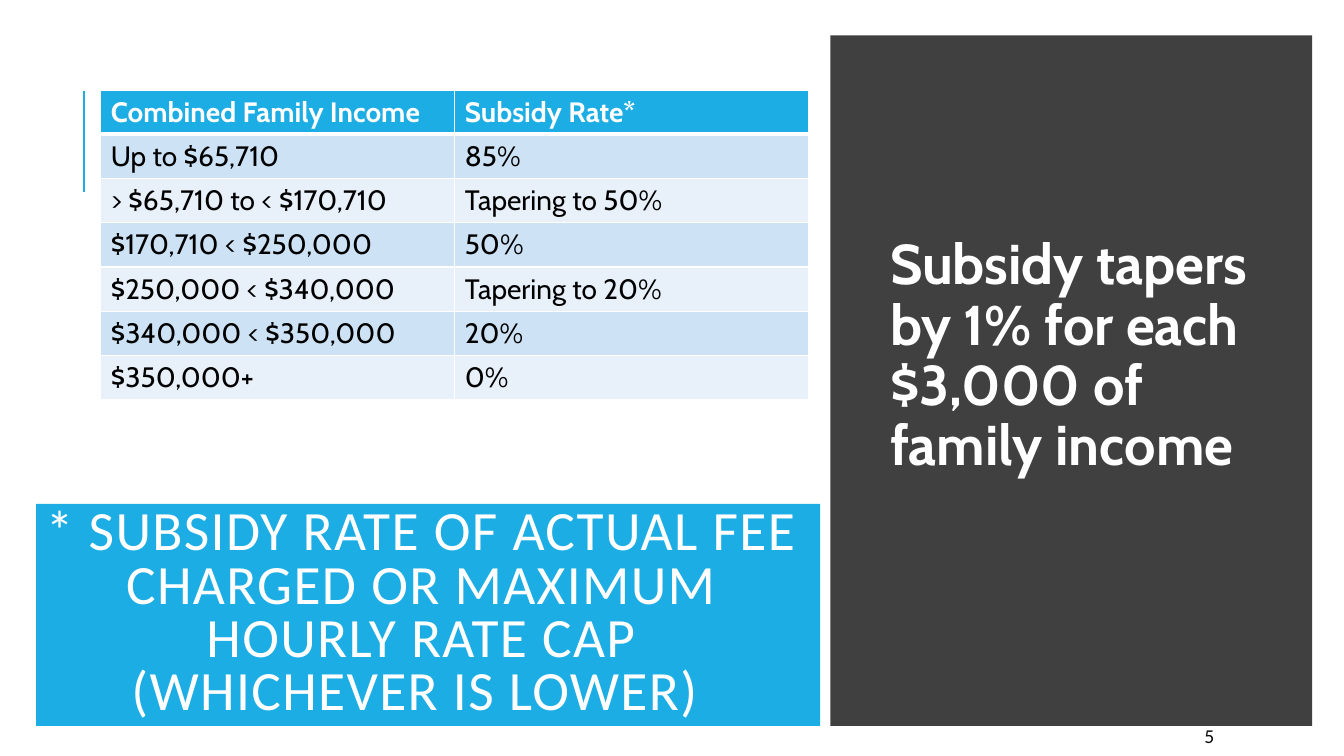
from dataclasses import dataclass

from lxml.etree import SubElement
from pptx import Presentation
from pptx.dml.color import RGBColor
from pptx.enum.shapes import MSO_CONNECTOR as Connector, MSO_SHAPE as Preset
from pptx.enum.text import MSO_ANCHOR as Anchor, MSO_AUTO_SIZE as AutoSize, PP_ALIGN as Align
from pptx.oxml.ns import qn
from pptx.slide import Slide
from pptx.table import _Cell as Cell
from pptx.text.text import TextFrame
from pptx.util import Cm, Pt

BLUE = RGBColor(0x1C, 0xAD, 0xE4)
CHARCOAL = RGBColor(0x40, 0x40, 0x40)
WHITE = RGBColor(0xFF, 0xFF, 0xFF)
BLACK = RGBColor(0x00, 0x00, 0x00)
NEAR_BLACK = RGBColor(0x0D, 0x0D, 0x0D)
BAND_DARK = RGBColor(0xCD, 0xE3, 0xF5)
BAND_LIGHT = RGBColor(0xE8, 0xF1, 0xFA)
ROW_HEIGHT = 1.11
COLUMN_WIDTH = 8.92


@dataclass(frozen=True)
class Area:
    left: float
    top: float
    width: float
    height: float

    def lengths(self) -> tuple[Cm, Cm, Cm, Cm]:
        return Cm(self.left), Cm(self.top), Cm(self.width), Cm(self.height)


@dataclass(frozen=True)
class Panel:
    area: Area
    color: RGBColor


@dataclass(frozen=True)
class TextStyle:
    font: str
    size: float
    color: RGBColor
    bold: bool = False
    align: Align = Align.LEFT
    line_spacing: float = 1.0


@dataclass(frozen=True)
class SubsidyBand:
    income: str
    rate: str


PANELS = [
    Panel(Area(0.91, 12.7, 19.76, 5.59), BLUE),
    Panel(Area(20.93, 0.89, 12.14, 17.4), CHARCOAL),
]
BANDS = [
    SubsidyBand("Combined Family Income", "Subsidy Rate*"),
    SubsidyBand("Up to $65,710", "85%"),
    SubsidyBand("> $65,710 to < $170,710", "Tapering to 50%"),
    SubsidyBand("$170,710 < $250,000", "50%"),
    SubsidyBand("$250,000 < $340,000", "Tapering to 20%"),
    SubsidyBand("$340,000 < $350,000", "20%"),
    SubsidyBand("$350,000+", "0%"),
]
HEADER_STYLE = TextStyle("Cabin", 20, WHITE, bold=True)
BODY_STYLE = TextStyle("Cabin", 20, BLACK)
TITLE_STYLE = TextStyle("Calibri", 39.6, WHITE, align=Align.CENTER, line_spacing=0.8)
TAPER_STYLE = TextStyle("Cabin", 40, WHITE, bold=True, line_spacing=0.9)
NUMBER_STYLE = TextStyle("Calibri", 14, NEAR_BLACK)


def write_text(frame: TextFrame, text: str, style: TextStyle) -> None:
    para = frame.paragraphs[0]
    para.add_run().text = text
    para.alignment = style.align
    para.line_spacing = style.line_spacing
    para.font.name = style.font
    para.font.size = Pt(style.size)
    para.font.bold = style.bold
    para.font.color.rgb = style.color


def prepare_frame(frame: TextFrame) -> None:
    frame.word_wrap = True
    frame.auto_size = AutoSize.NONE
    frame.vertical_anchor = Anchor.MIDDLE


def add_panel(page: Slide, panel: Panel) -> None:
    shape = page.shapes.add_shape(Preset.RECTANGLE, *panel.area.lengths())
    shape.shadow.inherit = False
    shape.fill.solid()
    shape.fill.fore_color.rgb = panel.color
    shape.line.fill.background()


def add_accent_line(page: Slide) -> None:
    line = page.shapes.add_connector(
        Connector.STRAIGHT, Cm(2.12), Cm(4.83), Cm(2.12), Cm(2.29)
    )
    line.line.color.rgb = BLUE
    line.line.width = Pt(1.5)
    SubElement(line._element.spPr, qn("a:effectLst"))


def place_title(page: Slide, text: str) -> None:
    title = page.shapes.title
    title.left, title.top, title.width, title.height = Area(0.89, 13.23, 19.48, 4.52).lengths()
    page.shapes._spTree.append(title._element)
    prepare_frame(title.text_frame)
    write_text(title.text_frame, text, TITLE_STYLE)
    for span in title.text_frame.paragraphs[0].runs:
        span._r.get_or_add_rPr().set("spc", "100")


def add_label(page: Slide, area: Area, text: str, style: TextStyle, inset: float) -> None:
    box = page.shapes.add_textbox(*area.lengths())
    frame = box.text_frame
    prepare_frame(frame)
    frame.margin_left = frame.margin_right = Cm(inset)
    write_text(frame, text, style)


def add_borders(cell: Cell, top: float, bottom: float) -> None:
    properties = cell._tc.get_or_add_tcPr()
    for side, points in (("lnL", 1), ("lnR", 1), ("lnT", top), ("lnB", bottom)):
        border = SubElement(properties, qn(f"a:{side}"), w=str(Pt(points)))
        fill = SubElement(border, qn("a:solidFill"))
        SubElement(fill, qn("a:srgbClr"), val=str(WHITE))


def add_subsidy_table(page: Slide, bands: list[SubsidyBand]) -> None:
    area = Area(2.54, 2.27, 2 * COLUMN_WIDTH, len(bands) * ROW_HEIGHT)
    table = page.shapes.add_table(len(bands), 2, *area.lengths()).table
    for column in table.columns:
        column.width = Cm(COLUMN_WIDTH)
    for index, band in enumerate(bands):
        table.rows[index].height = Cm(ROW_HEIGHT)
        is_header = index == 0
        color = BLUE if is_header else BAND_DARK if index % 2 else BAND_LIGHT
        for cell, text in zip(table.rows[index].cells, (band.income, band.rate)):
            add_borders(cell, 3 if index == 1 else 1, 3 if is_header else 1)
            cell.fill.solid()
            cell.fill.fore_color.rgb = color
            write_text(cell.text_frame, text, HEADER_STYLE if is_header else BODY_STYLE)


def main() -> None:
    deck = Presentation()
    deck.slide_width, deck.slide_height = Cm(33.87), Cm(19.05)
    page = deck.slides.add_slide(deck.slide_layouts.get_by_name("Title Only"))
    add_accent_line(page)
    for panel in PANELS:
        add_panel(page, panel)
    place_title(
        page,
        "* SUBSIDY RATE OF ACTUAL FEE CHARGED OR MAXIMUM HOURLY RATE CAP (WHICHEVER IS LOWER) ",
    )
    add_label(
        page,
        Area(22.3, 4.5, 10.11, 9.0),
        "Subsidy tapers by 1% for each $3,000 of family income",
        TAPER_STYLE,
        0.13,
    )
    add_label(page, Area(30.1, 18.16, 2.69, 0.76), "5", NUMBER_STYLE, 0.25)
    add_subsidy_table(page, BANDS)
    deck.save("out.pptx")


if __name__ == "__main__":
    main()
